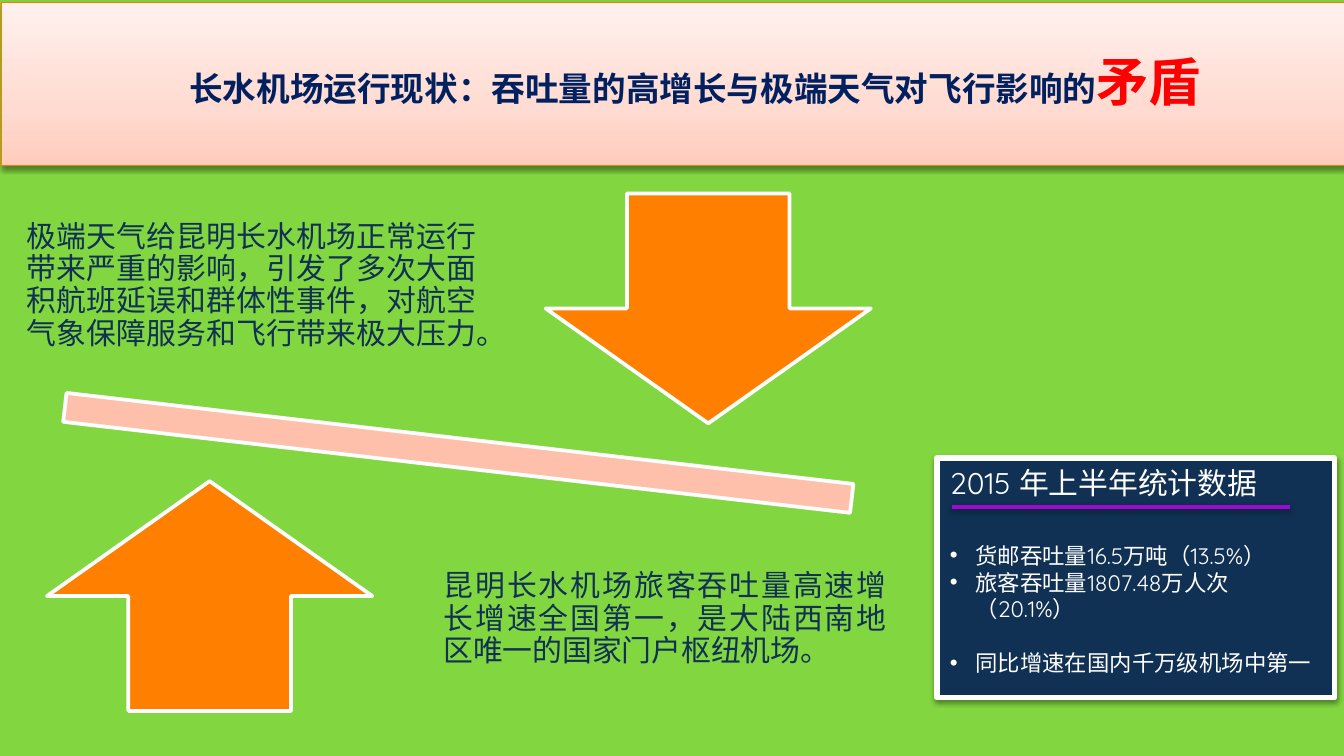
import copy

import pptx
import pptx.dml.color
import pptx.enum.shapes
import pptx.enum.text
import pptx.oxml
import pptx.oxml.ns
import pptx.util

RGB = pptx.dml.color.RGBColor
Inches, Pt = pptx.util.Inches, pptx.util.Pt
SHAPE = pptx.enum.shapes.MSO_SHAPE
ALIGN = pptx.enum.text.PP_ALIGN
ANCHOR = pptx.enum.text.MSO_ANCHOR
qn = pptx.oxml.ns.qn

GREEN = RGB(0x82, 0xD6, 0x40)
ORANGE = RGB(0xFF, 0x7F, 0x01)
BANNER_LINE = RGB(0xFA, 0x7C, 0x00)
BEAM = RGB(0xFF, 0xC0, 0xAB)
NAVY = RGB(0x10, 0x31, 0x54)
TITLE_BLUE = RGB(0x00, 0x20, 0x60)
RED = RGB(0xFF, 0x00, 0x00)
PURPLE = RGB(0x9D, 0x09, 0xD1)
WHITE = RGB(0xFF, 0xFF, 0xFF)
BANNER_STOPS = [(0, RGB(0xFF, 0xCC, 0xBD)), (0.35, RGB(0xFF, 0xDB, 0xD1)),
                (1, RGB(0xFF, 0xF1, 0xEE))]
FONT = "Quicksand"
WIDTH = 10
HEIGHT = WIDTH * 9 / 16

# Content
TITLE = [("长水机场运行现状：吞吐量的高增长与极端天气对飞行影响的", 18, TITLE_BLUE),
         ("矛盾", 28, RED)]
ARROW_SIZE = (2.42, 1.71)
ARROWS = [(SHAPE.DOWN_ARROW, 4.06, 1.44), (SHAPE.UP_ARROW, 0.35, 3.58)]
ARGUMENTS = [
    ((0.08, 1.23, 3.59, 1.8),
     "极端天气给昆明长水机场正常运行带来严重的影响，引发了多次大面积航班延误和群体性事件，"
     "对航空气象保障服务和飞行带来极大压力。"),
    ((3.18, 3.71, 3.54, 1.8),
     "昆明长水机场旅客吞吐量高速增长增速全国第一，是大陆西南地区唯一的国家门户枢纽机场。"),
]
STATS_HEADING = "2015 年上半年统计数据"
STATS = [("货邮吞吐量16.5万吨（13.5%）", 22),  # text, space before in points
         ("旅客吞吐量1807.48万人次（20.1%）", 0),
         ("同比增速在国内千万级机场中第一", 14.5)]

deck = pptx.Presentation()
deck.slide_width, deck.slide_height = Inches(WIDTH), Inches(HEIGHT)
page = deck.slides.add_slide(deck.slide_layouts[6])
page.background.fill.solid()
page.background.fill.fore_color.rgb = GREEN


def set_effects(shape, shadow):
    properties = shape._element.spPr
    for old in properties.findall(qn("a:effectLst")):
        properties.remove(old)
    outer = ('<a:outerShdw blurRad="39370" dist="20320" dir="5400000" rotWithShape="0">'
             '<a:srgbClr val="000000"><a:alpha val="38000"/></a:srgbClr></a:outerShdw>')
    properties.append(pptx.oxml.parse_xml(
        f'<a:effectLst {pptx.oxml.ns.nsdecls("a")}>{outer if shadow else ""}</a:effectLst>'))


def add_block(kind, place, fill, line=WHITE, weight=2, shadow=False):
    block = page.shapes.add_shape(kind, *map(Inches, place))
    if fill is not None:
        block.fill.solid()
        block.fill.fore_color.rgb = fill
    block.line.color.rgb = line
    block.line.width = Pt(weight)
    set_effects(block, shadow)
    return block


def add_box(place, inset=0.1):
    box = page.shapes.add_textbox(*map(Inches, place))
    frame = box.text_frame
    frame.word_wrap = True
    frame.vertical_anchor = ANCHOR.MIDDLE
    frame.margin_left = frame.margin_right = Inches(inset)
    return frame


def write(para, text, size=16, color=NAVY, bold=False, align=ALIGN.LEFT,
          spacing=None, before=0, bullet=False):
    para.alignment = align
    if spacing:
        para.line_spacing = spacing
    para.space_before = Pt(before)
    if bullet:
        settings = para._p.get_or_add_pPr()
        settings.set("marL", str(Inches(0.19)))
        settings.set("indent", str(-Inches(0.19)))
        for tag, key, value in (("a:buFont", "typeface", "Arial"), ("a:buChar", "char", "•")):
            settings.append(pptx.oxml.parse_xml(
                f'<{tag} {pptx.oxml.ns.nsdecls("a")} {key}="{value}"/>'))
    span = para.add_run()
    span.text = text
    span.font.name, span.font.size = FONT, Pt(size)
    span.font.bold, span.font.color.rgb = bold, color


# Banner with its gradient, pink at the foot
banner = add_block(SHAPE.RECTANGLE, (0.01, 0.02, WIDTH, 1.21), None,
                   line=BANNER_LINE, weight=0.75, shadow=True)
banner.fill.gradient()
banner.fill.gradient_angle = 90
stop_list = banner._element.spPr.find(qn("a:gradFill")).find(qn("a:gsLst"))
stop_list.append(copy.deepcopy(stop_list[-1]))
for stop, (position, color) in zip(banner.fill.gradient_stops, BANNER_STOPS):
    stop.position = position
    stop.color.rgb = color

title = add_box((1.31, 0.3, 7.9, 0.6))
for text, size, color in TITLE:
    write(title.paragraphs[0], text, size=size, color=color, bold=True)

# Tilted beam, arrows and the two arguments
beam = add_block(SHAPE.MATH_MINUS, (-0.6, 2.91, 8.02, 0.92), BEAM)
beam.rotation = 6.6
for kind, left, top in ARROWS:
    add_block(kind, (left, top, *ARROW_SIZE), ORANGE)
for place, text in ARGUMENTS:
    write(add_box(place, inset=0.12).paragraphs[0], text,
          align=ALIGN.JUSTIFY, spacing=0.9)

# Statistics panel
panel = add_block(SHAPE.RECTANGLE, (6.97, 3.41, 2.96, 1.78), NAVY, weight=3, shadow=True)
frame = panel.text_frame
frame.word_wrap = True
frame.vertical_anchor = ANCHOR.TOP
write(frame.paragraphs[0], STATS_HEADING, color=WHITE)
for text, before in STATS:
    write(frame.add_paragraph(), text, size=12, color=WHITE, before=before, bullet=True)

rule = page.shapes.add_connector(pptx.enum.shapes.MSO_CONNECTOR.STRAIGHT,
                                 *map(Inches, (7.08, 3.77, 9.6, 3.77)))
rule.line.color.rgb = PURPLE
rule.line.width = Pt(2)
set_effects(rule, True)

deck.save("out.pptx")
